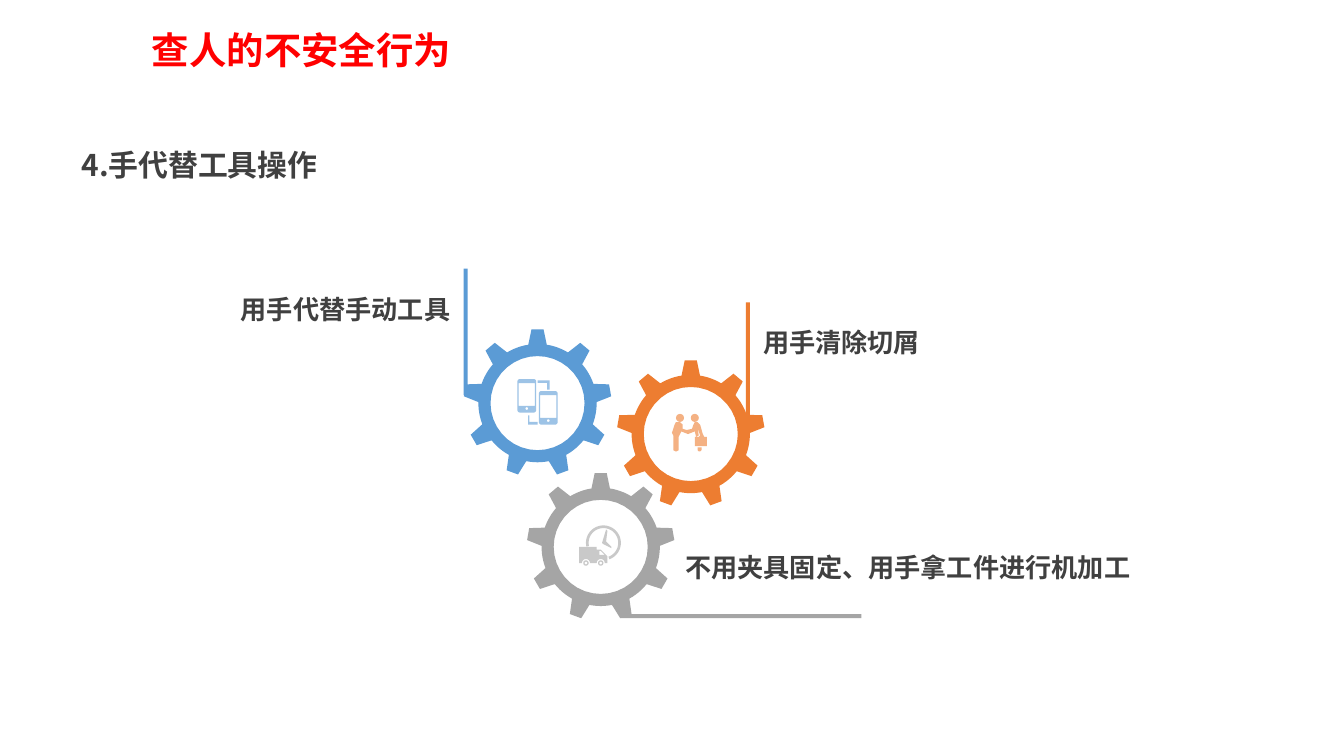
from math import cos, radians, sin

from lxml import etree
from pptx import Presentation
from pptx import util as u
from pptx.dml.color import RGBColor
from pptx.enum import shapes, text
from pptx.oxml.ns import qn

FONT = "Noto Sans CJK SC"
RED = RGBColor(0xFF, 0x00, 0x00)
DARK = RGBColor(0x40, 0x40, 0x40)
BLUE = RGBColor(0x5B, 0x9B, 0xD5)
ORANGE = RGBColor(0xED, 0x7D, 0x31)
GRAY = RGBColor(0xA5, 0xA5, 0xA5)
LIGHT_BLUE = RGBColor(0x9D, 0xC3, 0xE6)
LIGHT_ORANGE = RGBColor(0xF4, 0xB1, 0x83)
LIGHT_GRAY = RGBColor(0xC9, 0xC9, 0xC9)

presentation = Presentation()
presentation.slide_width = u.Inches(10)
presentation.slide_height = u.Inches(10) * 9 // 16
slide = presentation.slides.add_slide(presentation.slide_layouts[5])


def arc(x, y, radius, start=0, end=360, steps=36):
    angles = [radians(start + (end - start) * i / steps) for i in range(steps + 1)]
    return [(x + radius * cos(a), y + radius * sin(a)) for a in angles]


def draw_outline(contours, color):
    contours = [[(u.Inches(x), u.Inches(y)) for x, y in points] for points in contours]
    builder = slide.shapes.build_freeform(*contours[0][0])
    builder.add_line_segments(contours[0][1:], close=True)
    for points in contours[1:]:
        builder.move_to(*points[0])
        builder.add_line_segments(points[1:], close=True)
    shape = builder.convert_to_shape()
    shape.shadow.inherit = False
    shape.fill.solid()
    shape.fill.fore_color.rgb = color
    shape.line.fill.background()


RECTANGLE, OVAL = shapes.MSO_SHAPE.RECTANGLE, shapes.MSO_SHAPE.OVAL
for kind, left, top, width, height, color in [
    (RECTANGLE, 3.45, 2, 0.03, 0.94, BLUE),
    (RECTANGLE, 5.55, 2.25, 0.03, 0.94, ORANGE),
    (RECTANGLE, 4.62, 4.57, 1.79, 0.03, GRAY),
    (OVAL, 5.03, 3.08, 0.06, 0.06, LIGHT_ORANGE),
    (OVAL, 5.14, 3.08, 0.06, 0.06, LIGHT_ORANGE),
]:
    shape = slide.shapes.add_shape(
        kind, u.Inches(left), u.Inches(top), u.Inches(width), u.Inches(height))
    shape.shadow.inherit = False
    shape.fill.solid()
    shape.fill.fore_color.rgb = color
    shape.line.fill.background()

for x, y in [(3.85, 2.82), (4.01, 2.91)]:
    body = (arc(x + 0.02, y + 0.02, 0.02, 180, 270, 4)
            + arc(x + 0.12, y + 0.02, 0.02, 270, 360, 4)
            + arc(x + 0.12, y + 0.23, 0.02, 0, 90, 4)
            + arc(x + 0.02, y + 0.23, 0.02, 90, 180, 4))
    screen = [(x + 0.01, y + 0.03), (x + 0.13, y + 0.03),
              (x + 0.13, y + 0.2), (x + 0.01, y + 0.2)]
    draw_outline([body, screen, arc(x + 0.07, y + 0.22, 0.01)], LIGHT_BLUE)
draw_outline([[(4, 2.83), (4.09, 2.83), (4.09, 2.9), (4.07, 2.9),
               (4.07, 2.85), (4, 2.85)]], LIGHT_BLUE)
draw_outline([[(3.93, 3.09), (3.94, 3.09), (3.94, 3.14), (4, 3.14),
               (4, 3.16), (3.93, 3.16)]], LIGHT_BLUE)

draw_outline([[
    (5.03, 3.14), (5.06, 3.14), (5.08, 3.16), (5.08, 3.19), (5.11, 3.2),
    (5.15, 3.19), (5.16, 3.16), (5.17, 3.14), (5.19, 3.14), (5.21, 3.16),
    (5.23, 3.23), (5.24, 3.25), (5.26, 3.25), (5.26, 3.32), (5.17, 3.32),
    (5.17, 3.25), (5.2, 3.25), (5.21, 3.24), (5.19, 3.18), (5.2, 3.24),
    (5.18, 3.25), (5.17, 3.21), (5.12, 3.23), (5.07, 3.21), (5.05, 3.25),
    (5.05, 3.35), (5.03, 3.36), (5.01, 3.35), (5.01, 3.24), (5, 3.22),
    (5.02, 3.16)]], LIGHT_ORANGE)
draw_outline([[(5.19, 3.33), (5.22, 3.33), (5.22, 3.35), (5.21, 3.36),
               (5.2, 3.36), (5.19, 3.35)]], LIGHT_ORANGE)

clock = arc(4.49, 4.04, 0.13, 168, 430) + arc(4.49, 4.04, 0.11, 430, 168)
hands = [(4.48, 4.04), (4.51, 3.94), (4.52, 3.95), (4.51, 4.03),
         (4.55, 4.07), (4.55, 4.08), (4.49, 4.05)]
truck = ([(4.31, 4.07), (4.44, 4.07), (4.44, 4.09), (4.47, 4.09),
          (4.52, 4.14), (4.52, 4.19)]
         + arc(4.47, 4.19, 0.03, 0, -180, 12)
         + arc(4.36, 4.19, 0.03, 0, -180, 12) + [(4.31, 4.19)])
window = [(4.46, 4.1), (4.47, 4.1), (4.5, 4.13), (4.46, 4.13)]
wheels = [arc(x, 4.19, radius) for x in (4.36, 4.47) for radius in (0.02, 0.01)]
draw_outline([clock, hands, truck, window] + wheels, LIGHT_GRAY)

TEETH = 9
for x, y, color in [(4, 3, BLUE), (5.14, 3.23, ORANGE), (4.47, 4.07, GRAY)]:
    rim = []
    for tooth in range(TEETH):
        angle = 360 / TEETH * tooth - 90
        rim += arc(x, y, 0.55, angle - 4.7, angle + 4.7, 1)
        rim += arc(x, y, 0.44, angle + 9, angle + 31, 6)
    draw_outline([rim, arc(x, y, 0.35)], color)

LEFT, RIGHT = text.PP_ALIGN.LEFT, text.PP_ALIGN.RIGHT
for wording, left, top, width, height, size, color, align, spacing in [
    ("查人的不安全行为", 1.03, 0.15, 4.41, 0.44, 20, RED, LEFT, 1),
    ("4.手代替工具操作", 0.51, 1.04, 2.13, 0.37, 16, DARK, LEFT, 1),
    ("用手代替手动工具", 1.42, 2.09, 2.03, 0.63, 14, DARK, RIGHT, 1.2),
    ("用手清除切屑", 5.58, 2.33, 1.44, 0.63, 14, DARK, LEFT, 1.2),
    ("不用夹具固定、用手拿工件进行机加工", 5, 4.01, 3.6, 0.46, 14, DARK, LEFT, 1.2),
]:
    box = (u.Inches(left), u.Inches(top), u.Inches(width), u.Inches(height))
    if color == RED:
        shape = slide.shapes.title
        shape.left, shape.top, shape.width, shape.height = box
    else:
        shape = slide.shapes.add_textbox(*box)
    frame = shape.text_frame
    frame.text = wording
    frame.word_wrap = True
    frame.auto_size = text.MSO_AUTO_SIZE.NONE
    frame.vertical_anchor = text.MSO_ANCHOR.TOP
    paragraph = frame.paragraphs[0]
    paragraph.alignment = align
    paragraph.line_spacing = spacing
    run = paragraph.runs[0]
    run.font.size = u.Pt(size)
    run.font.bold = True
    run.font.color.rgb = color
    run.font.name = FONT
    etree.SubElement(run.font._element, qn("a:ea")).set("typeface", FONT)

presentation.save("out.pptx")
